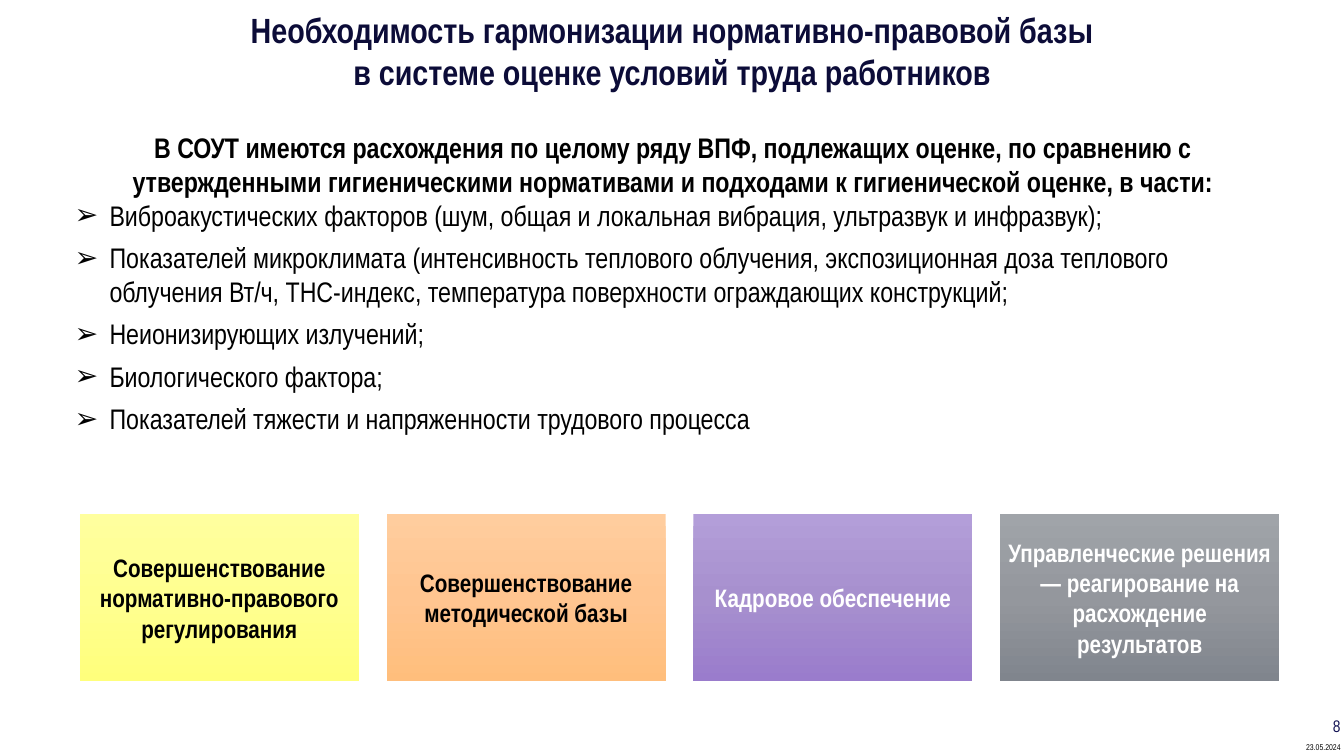
from copy import deepcopy
from dataclasses import dataclass

from lxml import etree
from pptx import Presentation
from pptx.dml.color import RGBColor as RGB
from pptx.enum.shapes import MSO_SHAPE as Shape
from pptx.enum.text import MSO_ANCHOR as Anchor, MSO_AUTO_SIZE as Auto, PP_ALIGN as Align
from pptx.oxml.ns import qn
from pptx.util import Pt

FONT = "Arial Narrow"
COLORS = {"title": "0C0C38", "number": "131354", "black": "000000", "white": "FFFFFF"}


@dataclass
class Card:
    text: str
    stops: tuple[str, str, str]
    color: str


CARDS = [
    Card("Совершенствование нормативно-правового регулирования",
         ("FFFF9E", "FFFF90", "FFFF7C"), "black"),
    Card("Совершенствование методической базы",
         ("FFCD9E", "FFC590", "FFBE7C"), "black"),
    Card("Кадровое обеспечение",
         ("B39ED9", "A790CE", "9A7CCC"), "white"),
    Card("Управленческие решения — реагирование на расхождение результатов",
         ("A0A4A9", "94979D", "80858D"), "white"),
]
CARD_LEFT, CARD_TOP, CARD_W, CARD_H, CARD_STEP = 57, 367.2, 199.4, 119.5, 219.15

INTRO = ("В СОУТ имеются расхождения по целому ряду ВПФ, подлежащих оценке, по сравнению "
         "с утвержденными гигиеническими нормативами и подходами к гигиенической оценке, в части:")
FACTORS = [
    "Виброакустических факторов (шум, общая и локальная вибрация, ультразвук и инфразвук);",
    "Показателей микроклимата (интенсивность теплового облучения, экспозиционная доза "
    "теплового облучения Вт/ч, ТНС-индекс, температура поверхности ограждающих конструкций;",
    "Неионизирующих излучений;",
    "Биологического фактора;",
    "Показателей тяжести и напряженности трудового процесса",
]


def set_all(obj, values: dict) -> None:
    for name, value in values.items():
        setattr(obj, name, value)


def place(sp, left: float, top: float, width: float, height: float) -> None:
    set_all(sp, {"left": Pt(left), "top": Pt(top), "width": Pt(width), "height": Pt(height)})


def format_frame(tf, inset: float, anchor=Anchor.MIDDLE, wrap: bool = True) -> None:
    set_all(tf, {"word_wrap": wrap, "auto_size": Auto.NONE, "vertical_anchor": anchor,
                 "margin_left": Pt(inset), "margin_right": Pt(inset),
                 "margin_top": Pt(inset), "margin_bottom": Pt(inset)})


def write(p, text: str, size: float, color: str, align, bold: bool = False) -> None:
    p.text = text
    p.alignment = align
    for r in p.runs:
        set_all(r.font, {"name": FONT, "size": Pt(size), "bold": bold})
        r.font.color.rgb = RGB.from_string(COLORS[color])


def add_bullet(p, char: str, indent: float) -> None:
    pPr = p._p.get_or_add_pPr()
    pPr.set("marL", str(Pt(indent)))
    pPr.set("indent", str(-Pt(indent)))
    etree.SubElement(pPr, qn("a:buFont")).set("typeface", "Wingdings")
    pPr[-1].set("typeface", "Arial")
    etree.SubElement(pPr, qn("a:buChar")).set("char", char)


def fill_gradient(sp, stops: tuple[str, str, str]) -> None:
    sp.fill.gradient()
    sp.fill.gradient_angle = 270  # top to bottom
    first = sp._element.spPr.find(f".//{qn('a:gs')}")
    first.addnext(deepcopy(first))
    for i, (stop, color) in enumerate(zip(sp.fill.gradient_stops, stops)):
        stop.position = i / 2
        stop.color.rgb = RGB.from_string(color)


def add_card(slide, i: int, card: Card) -> None:
    sp = slide.shapes.add_shape(Shape.RECTANGLE, Pt(CARD_LEFT + i * CARD_STEP), Pt(CARD_TOP),
                                Pt(CARD_W), Pt(CARD_H))
    sp.shadow.inherit = False
    sp.line.fill.background()
    fill_gradient(sp, card.stops)
    format_frame(sp.text_frame, 5)
    write(sp.text_frame.paragraphs[0], card.text, 18, card.color, Align.CENTER, True)


def add_text(slide, left: float, top: float, width: float, height: float):
    return slide.shapes.add_textbox(Pt(left), Pt(top), Pt(width), Pt(height)).text_frame


def main() -> None:
    prs = Presentation()
    set_all(prs, {"slide_width": Pt(960), "slide_height": Pt(540)})
    slide = prs.slides.add_slide(prs.slide_layouts[5])

    # Title
    title = slide.shapes.title
    place(title, 12.4, 0, 935.2, 72)
    format_frame(title.text_frame, 5.75)
    write(title.text_frame.paragraphs[0],
          "Необходимость гармонизации нормативно-правовой базы\n"
          "в системе оценке условий труда работников", 25, "title", Align.CENTER, True)

    # Introduction and list of factors
    tf = add_text(slide, 46.2, 89.3, 868.3, 226.8)
    format_frame(tf, 7.2, Anchor.TOP)
    set_all(tf, {"margin_top": Pt(3.6), "margin_bottom": Pt(3.6)})
    write(tf.paragraphs[0], INTRO, 20.2, "black", Align.CENTER, True)
    for factor in FACTORS:
        p = tf.add_paragraph()
        add_bullet(p, "➢", 25)
        p.space_after = Pt(6)
        write(p, factor, 20.2, "black", Align.LEFT)

    # Cards
    for i, card in enumerate(CARDS):
        add_card(slide, i, card)

    # Slide number and date
    tf = add_text(slide, 929.5, 508.3, 31, 17.3)
    format_frame(tf, 2.9)
    tf.margin_bottom = 0
    write(tf.paragraphs[0], "8", 12, "number", Align.RIGHT)
    tf = add_text(slide, 929.5, 527, 31, 13)
    format_frame(tf, 2.9, Anchor.TOP, wrap=False)
    write(tf.paragraphs[0], "23.05.2024", 6, "black", Align.RIGHT)

    prs.save("out.pptx")


if __name__ == "__main__":
    main()
